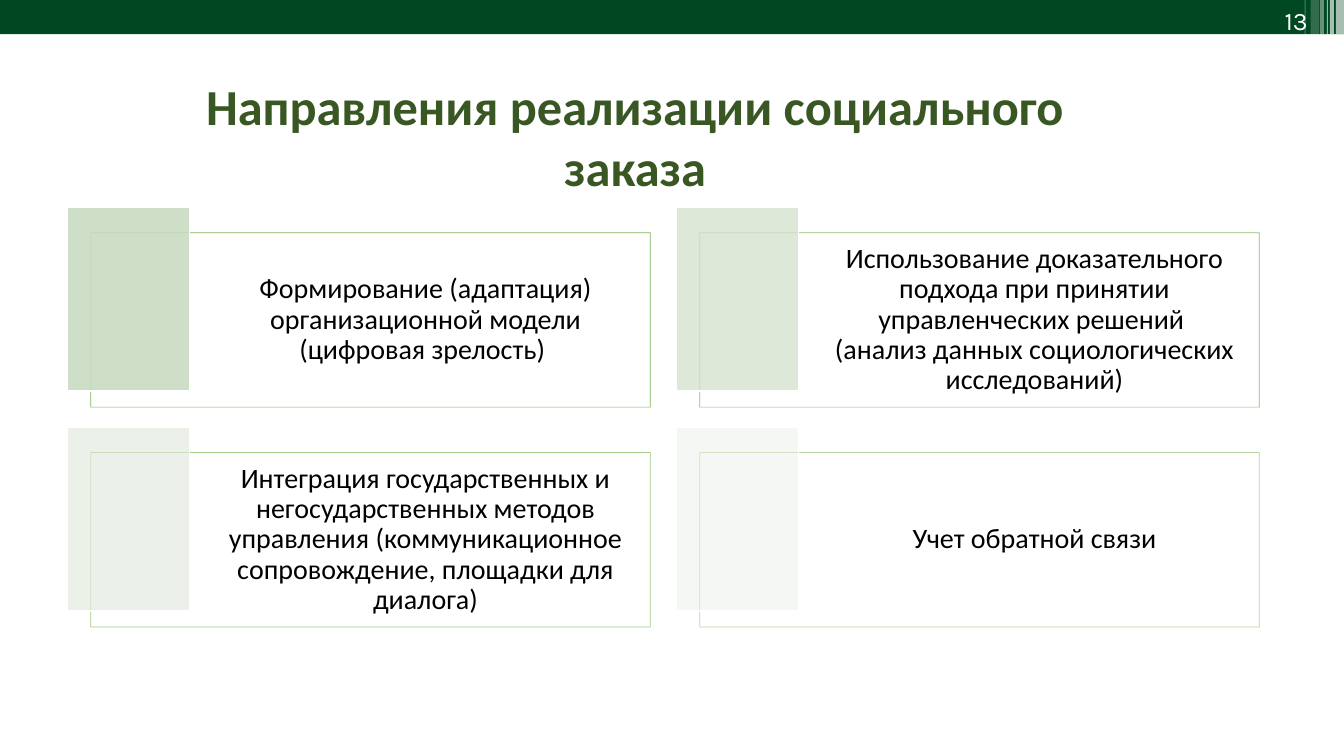
from lxml.etree import SubElement as Sub
from pptx import Presentation
from pptx.dml.color import RGBColor as Rgb
from pptx.enum.shapes import MSO_SHAPE as Shape
from pptx.enum.text import MSO_ANCHOR as Anchor, PP_ALIGN as Align
from pptx.oxml.ns import qn
from pptx.util import Inches, Pt

HUES = {"white": "FFFFFF", "bar": "004821", "title": "385723",
        "edge": "70AD47", "text": "000000"}
STRIPES = [(13.25, 0.08, 0.34, 65), (13.19, 0.04, 0.34, 65),
           (13.16, 0.01, 0.34, 60), (13.09, 0.04, 0.34, 40),
           (13, 0.08, 0.36, 20), (12.94, 0.01, 0.36, 30)]
CARDS = [
    ("Формирование (адаптация) организационной модели (цифровая зрелость) ",
     "C9DBC1", 90),
    ("Использование доказательного подхода при принятии управленческих "
     "решений \v(анализ данных социологических исследований)", "D4E2CE", 77),
    ("Интеграция государственных и негосударственных методов управления "
     "(коммуникационное сопровождение, площадки для диалога)", "E0EADC", 63),
    ("Учет обратной связи", "EBF1E9", 50),
]


def paint(fill, hue, alpha):
    """Give a fill a solid colour with an opacity in percent."""
    fill.solid()
    fill.fore_color.rgb = Rgb.from_string(hue)
    if alpha < 100:
        tint = fill._xPr.find(qn("a:solidFill"))[0]
        Sub(tint, qn("a:alpha")).set("val", str(alpha * 1000))


def add_rect(slide, at, hue, alpha=100, line=None):
    """Draw a rectangle; line holds colour, width and opacity."""
    rect = slide.shapes.add_shape(Shape.RECTANGLE, *map(Inches, at))
    rect.shadow.inherit = False
    paint(rect.fill, hue, alpha)
    if line:
        edge, width, clear = line
        rect.line.width = Pt(width)
        paint(rect.line.fill, edge, clear)
    else:
        rect.line.fill.background()
    return rect


def write(frame, text, hue, align, font, layout=None):
    """Fill a text frame with one paragraph in the given format."""
    frame.word_wrap = True
    para = frame.paragraphs[0]
    para.text = text
    for name, value in {"alignment": align, **(layout or {})}.items():
        setattr(para, name, value)
    for run in para.runs:
        run.font.color.rgb = Rgb.from_string(hue)
        for name, value in font.items():
            setattr(run.font, name, value)


def add_label(slide, at, *style):
    """Add a text box."""
    box = slide.shapes.add_textbox(*map(Inches, at))
    write(box.text_frame, *style)


def add_card(slide, left, top, text, hue, alpha):
    """Add an outlined box of text with a tinted patch at its corner."""
    box = add_rect(slide, (left, top, 5.55, 1.73), HUES["white"], 40,
                   (HUES["edge"], 0.5, alpha))
    frame = box.text_frame
    pad = Inches(0.08)
    form = {"vertical_anchor": Anchor.MIDDLE, "margin_left": Inches(1.17),
            "margin_top": pad, "margin_right": pad, "margin_bottom": pad}
    for name, value in form.items():
        setattr(frame, name, value)
    write(frame, text, HUES["text"], Align.CENTER,
          {"name": "Calibri", "size": Pt(20)},
          {"line_spacing": 0.9, "space_after": Pt(7)})
    add_rect(slide, (left - 0.23, top - 0.25, 1.21, 1.82), hue, alpha,
             (HUES["white"], 1, 100))


def main():
    """Build the slide and save it."""
    deck = Presentation()
    deck.slide_width, deck.slide_height = Inches(13.33), Inches(7.5)
    slide = deck.slides.add_slide(deck.slide_layouts[6])
    add_rect(slide, (0, 0, 13.33, 0.34), HUES["bar"])
    for left, width, height, alpha in STRIPES:
        add_rect(slide, (left, 0, width, height), HUES["white"], alpha)
    add_label(slide, (11.87, 0, 1.2, 0.37), "13", HUES["white"], Align.RIGHT,
              {"name": "Karla", "size": Pt(18)})
    add_label(slide, (1.22, 0.7, 10.16, 0.71),
              "Направления реализации социального заказа", HUES["title"],
              Align.CENTER, {"name": "Calibri", "size": Pt(36), "bold": True})
    for i, card in enumerate(CARDS):
        row, col = divmod(i, 2)
        add_card(slide, 0.9 + 6.04 * col, 2.31 + 2.18 * row, *card)
    deck.save("out.pptx")


if __name__ == "__main__":
    main()
